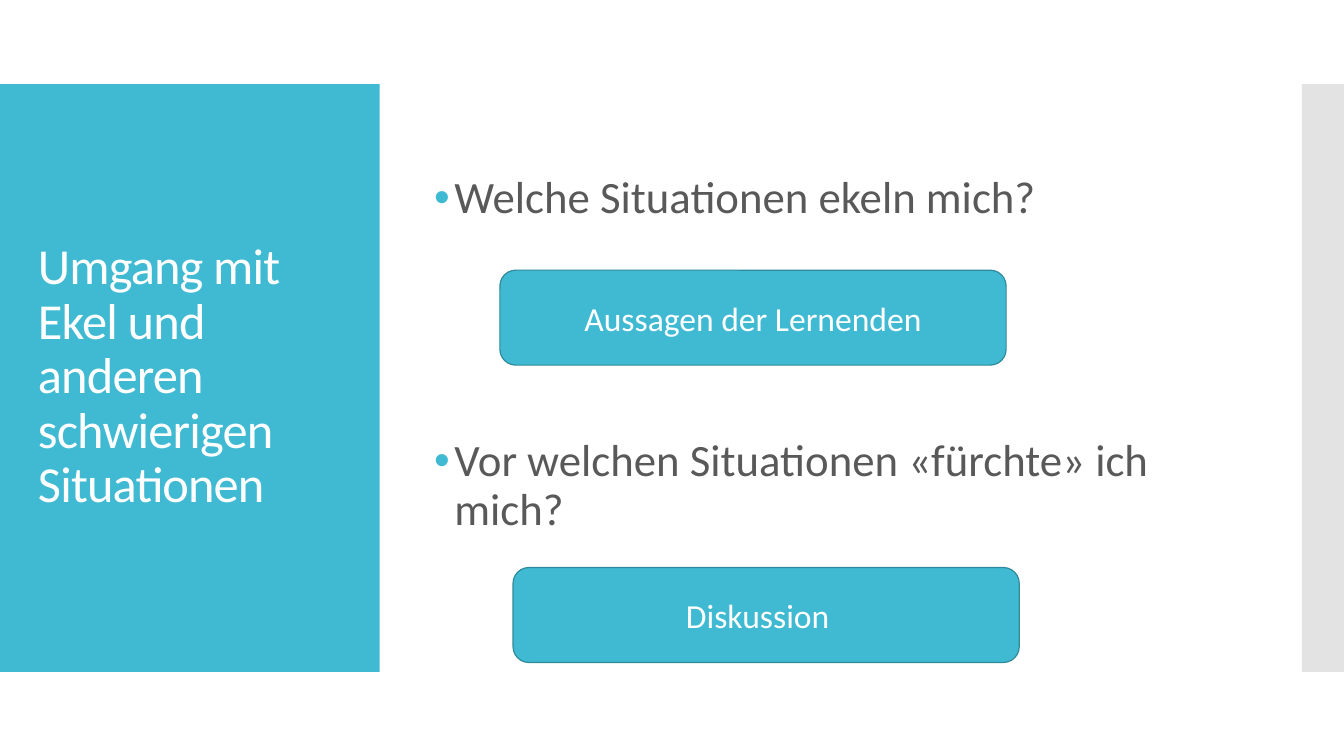
"""Build the slide on dealing with disgust and other difficult situations."""
from lxml import etree
from pptx import Presentation
from pptx.dml.color import RGBColor
from pptx.enum.shapes import MSO_SHAPE
from pptx.enum.text import MSO_ANCHOR, PP_ALIGN
from pptx.oxml.ns import qn
from pptx.util import Pt

RECTANGLE, ROUNDED = MSO_SHAPE.RECTANGLE, MSO_SHAPE.ROUNDED_RECTANGLE
TOP, MIDDLE = MSO_ANCHOR.TOP, MSO_ANCHOR.MIDDLE
LEFT, CENTER = PP_ALIGN.LEFT, PP_ALIGN.CENTER

TITLE = "Umgang mit Ekel und anderen schwierigen Situationen"
QUESTIONS = [
    ("Welche Situationen ekeln mich?", 0),
    ("Vor welchen Situationen «fürchte» ich mich?", 153.3),
]
ACTIVITIES = [
    ("Diskussion", 366.5, 405.4, 19.2),
    ("Aussagen der Lernenden", 357.1, 193, 7.2),
]
COLORS = {"accent": "40BAD2", "outline": "2F8A9B", "edge": "C8C8C8",
          "white": "FFFFFF", "body": "595959"}
FONT = "Calibri"
SLIDE_WIDTH, SLIDE_HEIGHT = 960, 540
BAND_TOP, BAND_HEIGHT = 60, 420
TITLE_PANEL_WIDTH, EDGE_WIDTH = 271.2, 30
BUTTON_WIDTH, BUTTON_HEIGHT = 361.6, 67.8
BULLET_INDENT = 14.4


def color(name):
    return RGBColor.from_string(COLORS[name])


def add_block(slide, kind, box, fill, outline=None):
    shape = slide.shapes.add_shape(kind, *map(Pt, box))
    shape.shadow.inherit = False
    shape.fill.solid()
    shape.fill.fore_color.rgb = color(fill)
    if outline:
        shape.line.color.rgb = color(outline)
        shape.line.width = Pt(0.85)
    else:
        shape.line.fill.background()
    return shape


def add_text_box(slide, box, anchor):
    frame = slide.shapes.add_textbox(*map(Pt, box)).text_frame
    frame.word_wrap = True
    frame.vertical_anchor = anchor
    return frame


def write(paragraph, text, size, ink, alignment=LEFT, line_spacing=0.9):
    paragraph.alignment = alignment
    paragraph.line_spacing = line_spacing
    run = paragraph.add_run()
    run.text = text
    run.font.name = FONT
    run.font.size = Pt(size)
    run.font.color.rgb = color(ink)
    return run


def add_bullet(paragraph):
    properties = paragraph._p.get_or_add_pPr()
    properties.set("marL", str(Pt(BULLET_INDENT)))
    properties.set("indent", str(-Pt(BULLET_INDENT)))
    bullet_color = etree.SubElement(properties, qn("a:buClr"))
    etree.SubElement(bullet_color, qn("a:srgbClr"), val=COLORS["accent"])
    etree.SubElement(properties, qn("a:buFont"), typeface="Arial")
    etree.SubElement(properties, qn("a:buChar"), char="•")


def add_side_blocks(slide):
    add_block(slide, RECTANGLE, (0, BAND_TOP, TITLE_PANEL_WIDTH, BAND_HEIGHT), "accent")
    edge_box = (SLIDE_WIDTH - EDGE_WIDTH, BAND_TOP, EDGE_WIDTH, BAND_HEIGHT)
    edge = add_block(slide, RECTANGLE, edge_box, "edge")
    edge_color = edge._element.spPr.find(qn("a:solidFill"))[0]
    etree.SubElement(edge_color, qn("a:alpha"), val="50000")


def add_title(slide):
    frame = add_text_box(slide, (20, 88.6, 231.8, 362.2), MIDDLE)
    run = write(frame.paragraphs[0], TITLE, 36, "white")
    run.font._element.set("spc", "-60")


def add_questions(slide):
    frame = add_text_box(slide, (303.1, 121.6, 576, 329), TOP)
    for index, (question, space_before) in enumerate(QUESTIONS):
        paragraph = frame.add_paragraph() if index else frame.paragraphs[0]
        write(paragraph, question, 32, "body")
        paragraph.space_before = Pt(space_before)
        add_bullet(paragraph)


def add_activities(slide):
    for label, left, top, right_margin in ACTIVITIES:
        box = (left, top, BUTTON_WIDTH, BUTTON_HEIGHT)
        frame = add_block(slide, ROUNDED, box, "accent", "outline").text_frame
        frame.word_wrap = True
        frame.vertical_anchor = MIDDLE
        frame.margin_right = Pt(right_margin)
        write(frame.paragraphs[0], label, 24, "white", CENTER, 1.0)


def main():
    presentation = Presentation()
    presentation.slide_width = Pt(SLIDE_WIDTH)
    presentation.slide_height = Pt(SLIDE_HEIGHT)
    slide = presentation.slides.add_slide(presentation.slide_layouts[6])
    add_side_blocks(slide)
    add_title(slide)
    add_questions(slide)
    add_activities(slide)
    presentation.save("out.pptx")


if __name__ == "__main__":
    main()
